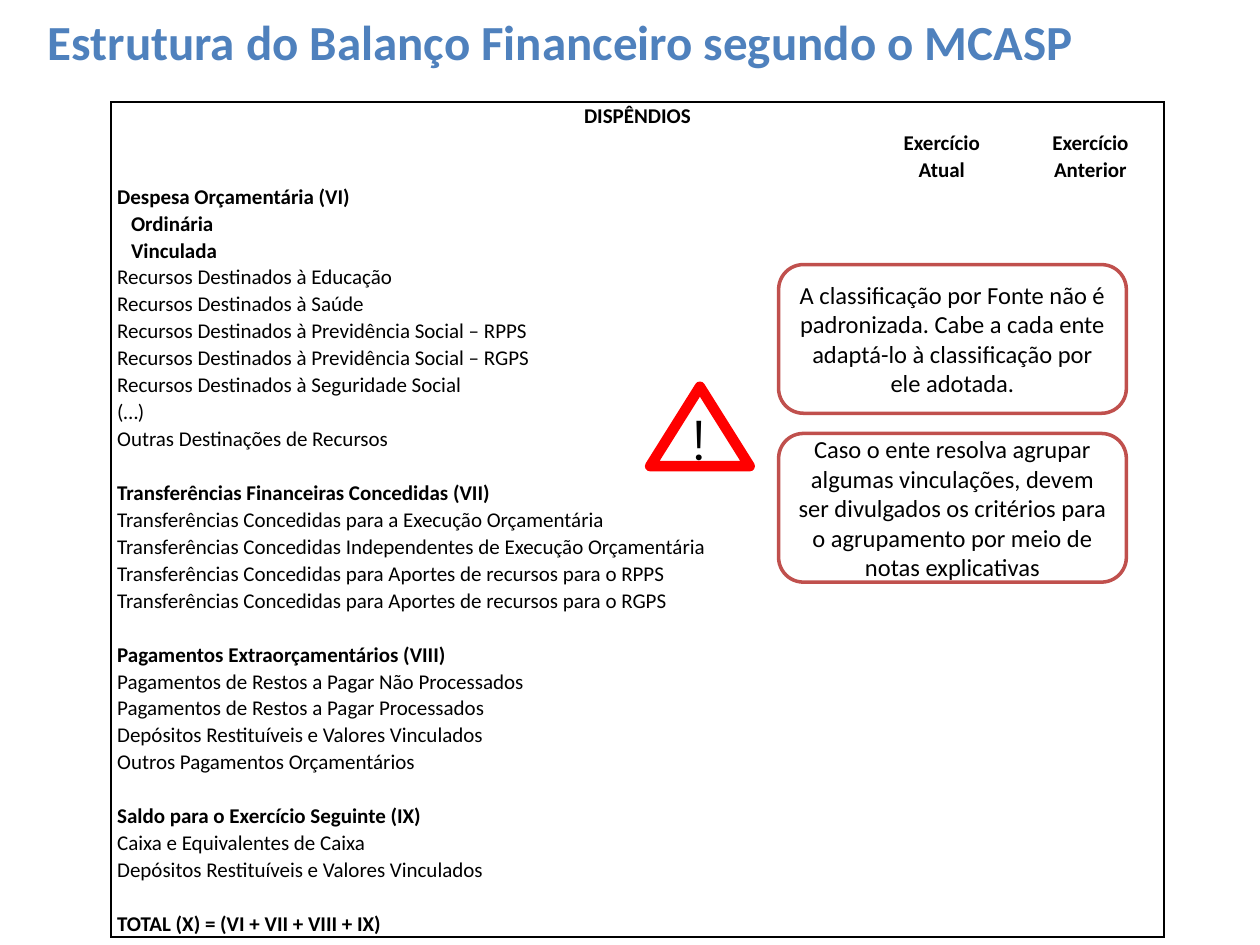
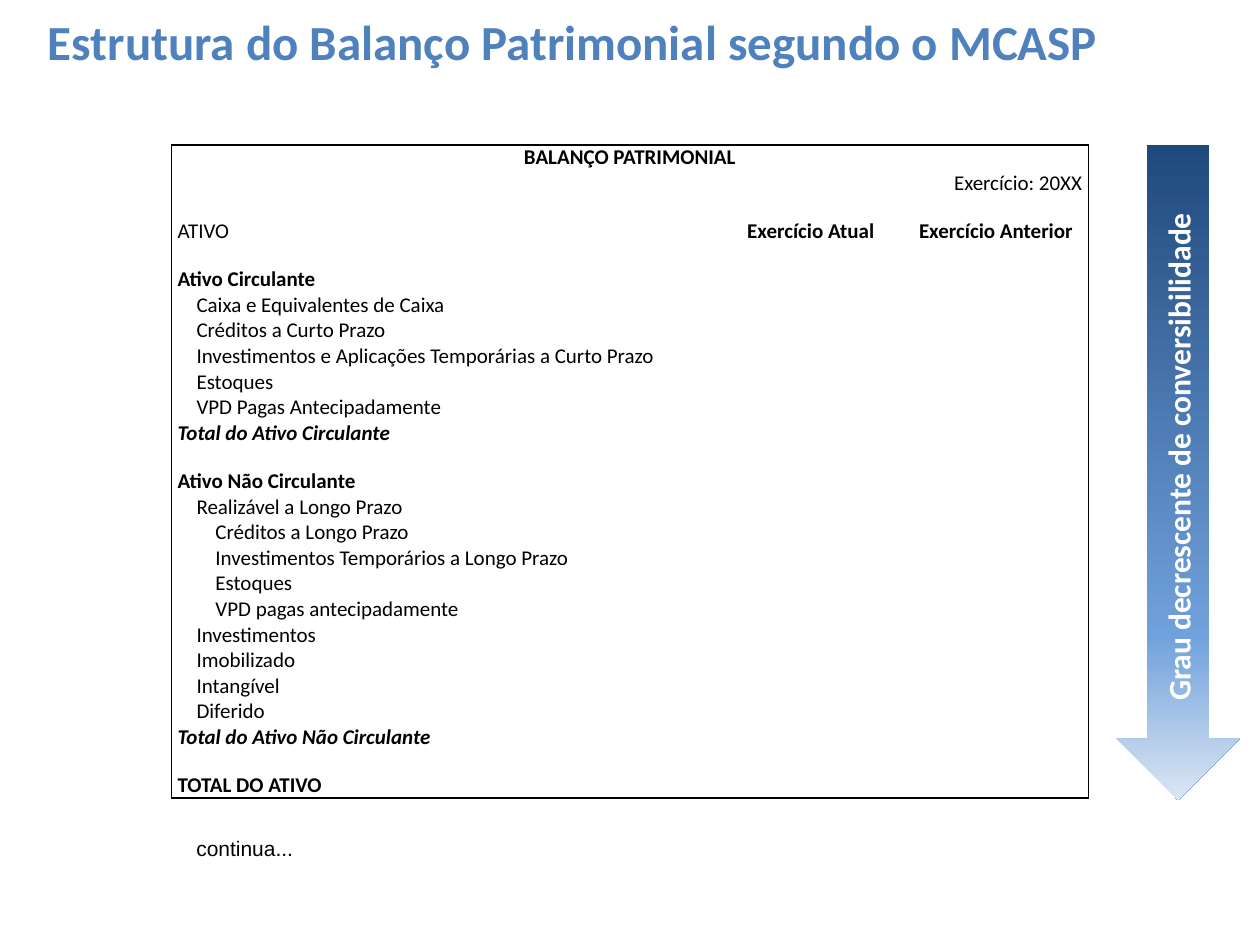
import dataclasses

import pptx
import pptx.dml.color
import pptx.enum.shapes
import pptx.enum.text
import pptx.oxml
import pptx.oxml.ns
import pptx.util

SHAPE = pptx.enum.shapes.MSO_SHAPE
ALIGN = pptx.enum.text.PP_ALIGN
ANCHOR = pptx.enum.text.MSO_ANCHOR
DRAWING = pptx.oxml.ns.nsdecls("a")


@dataclasses.dataclass(frozen=True)
class Theme:
    font: str = "Calibri"
    note_font: str = "Arial"
    sign_font: str = "Montserrat"
    title: str = "4F81BD"
    ink: str = "000000"
    paper: str = "FFFFFF"
    callout: str = "C0504D"
    warning: str = "FF0000"
    arrow: tuple = ((0, "1F497D"), (75, "71A1DC"), (100, "DCE6F2"))
    title_size: int = 28
    sign_size: int = 32
    arrow_size: int = 18
    callout_size: int = 14
    table_size: int = 12
    blank_size: int = 10


@dataclasses.dataclass(frozen=True)
class Line:
    text: str
    bold: bool = False
    italic: bool = False
    indent: float = 0
    align: object = ALIGN.LEFT


def heading(text, **options):
    return Line(text, bold=True, **options)


def centred(text):
    return heading(text, align=ALIGN.CENTER)


def total(text):
    return heading(text, italic=True)


def section(title, *items, indent=0):
    return [[[heading(title, indent=indent)]]] + [[[Line(item)]] for item in items]


class Deck:
    """Places elements on a grid of 100 columns by 75 rows."""

    def __init__(self, theme):
        self.theme = theme
        self.presentation = pptx.Presentation()
        self.presentation.slide_width = pptx.util.Inches(10)
        self.presentation.slide_height = pptx.util.Inches(7.5)
        self.slide = None

    def across(self, columns):
        return round(self.presentation.slide_width * columns / 100)

    def down(self, rows):
        return round(self.presentation.slide_height * rows / 75)

    def box(self, left, top, width, height):
        return self.across(left), self.down(top), self.across(width), self.down(height)

    def run(self, paragraph, text, size, color=None, font=None, bold=False, italic=False):
        run = paragraph.add_run()
        run.text = text
        run.font.name = font or self.theme.font
        run.font.size = pptx.util.Pt(size)
        run.font.bold = bold
        run.font.italic = italic
        run.font.color.rgb = pptx.dml.color.RGBColor.from_string(color or self.theme.ink)

    def add_slide(self, title):
        self.slide = self.presentation.slides.add_slide(self.presentation.slide_layouts[5])
        shape = self.slide.shapes.title
        shape.left, shape.top, shape.width, shape.height = self.box(2.8, -0.3, 90, 7.1)
        frame = shape.text_frame
        frame.auto_size = pptx.enum.text.MSO_AUTO_SIZE.NONE
        frame.vertical_anchor = ANCHOR.MIDDLE
        frame.paragraphs[0].alignment = ALIGN.LEFT
        self.run(frame.paragraphs[0], title, self.theme.title_size, self.theme.title, bold=True)

    def shape(self, kind, area, line=None, weight=0):
        shape = self.slide.shapes.add_shape(kind, *self.box(*area))
        shape.shadow.inherit = False
        shape.fill.solid()
        shape.fill.fore_color.rgb = pptx.dml.color.RGBColor.from_string(self.theme.paper)
        if line:
            shape.line.color.rgb = pptx.dml.color.RGBColor.from_string(line)
            shape.line.width = pptx.util.Pt(weight)
        else:
            shape.line.fill.background()
        return shape

    def label(self, shape, text, size, **style):
        frame = shape.text_frame
        frame.word_wrap = True
        frame.vertical_anchor = ANCHOR.MIDDLE
        frame.paragraphs[0].alignment = ALIGN.CENTER
        self.run(frame.paragraphs[0], text, size, **style)

    def callout(self, area, text):
        shape = self.shape(SHAPE.ROUNDED_RECTANGLE, area, self.theme.callout, 2)
        self.label(shape, text, self.theme.callout_size)

    def text(self, area, text, size, font, align=ALIGN.LEFT, wrap=True):
        frame = self.slide.shapes.add_textbox(*self.box(*area)).text_frame
        frame.word_wrap = wrap
        frame.paragraphs[0].alignment = align
        self.run(frame.paragraphs[0], text, size, font=font)

    def warning_sign(self, area, mark_area):
        triangle = self.shape(SHAPE.ISOSCELES_TRIANGLE, area, self.theme.warning, 6)
        outline = triangle._element.spPr.find(pptx.oxml.ns.qn("a:ln"))
        outline.append(pptx.oxml.parse_xml(f"<a:round {DRAWING}/>"))
        self.text(mark_area, "!", self.theme.sign_size, self.theme.sign_font, ALIGN.CENTER)

    def gradient_arrow(self, area, text):
        shape = self.shape(SHAPE.DOWN_ARROW, area)
        stops = "".join(
            f'<a:gs pos="{share * 1000}"><a:srgbClr val="{color}"/></a:gs>'
            for share, color in self.theme.arrow)
        gradient = pptx.oxml.parse_xml(
            f'<a:gradFill {DRAWING}><a:gsLst>{stops}</a:gsLst>'
            '<a:lin ang="5400000" scaled="0"/></a:gradFill>')
        properties = shape._element.spPr
        properties.replace(properties.find(pptx.oxml.ns.qn("a:solidFill")), gradient)
        shape._element.txBody.bodyPr.set("vert", "vert270")
        self.label(shape, text, self.theme.arrow_size, color=self.theme.paper, bold=True)

    def table(self, left, top, widths, rows, merges, line_height, blank_height, spacing, anchor):
        """Each row lists its cells; each cell lists its lines."""
        heights = [line_height * max(map(len, row)) if row else blank_height for row in rows]
        area = self.box(left, top, sum(widths), sum(heights))
        table = self.slide.shapes.add_table(len(rows), len(widths), *area).table
        table.first_row = table.horz_banding = False
        for column, width in zip(table.columns, widths):
            column.width = self.across(width)
        for row, height in zip(table.rows, heights):
            row.height = self.down(height)
        for row, first, last in merges:
            table.cell(row, first).merge(table.cell(row, last))
        for i, row in enumerate(rows):
            for j in range(len(widths)):
                cell = table.cell(i, j)
                self.fill_cell(cell, row[j] if j < len(row) else [], spacing, anchor)
                end = j + (cell.span_width if cell.is_merge_origin else 1)
                self.border(cell, lnL=j == 0, lnR=end == len(widths),
                            lnT=i == 0, lnB=i == len(rows) - 1)

    def fill_cell(self, cell, lines, spacing, anchor):
        cell.margin_left = cell.margin_right = self.across(0.5)
        cell.margin_top = cell.margin_bottom = 0
        cell.vertical_anchor = anchor
        cell.fill.background()
        frame = cell.text_frame
        if not lines:
            ending = frame.paragraphs[0]._p.get_or_add_endParaRPr()
            ending.set("sz", str(self.theme.blank_size * 100))
        for number, line in enumerate(lines):
            paragraph = frame.add_paragraph() if number else frame.paragraphs[0]
            paragraph.alignment = line.align
            paragraph.line_spacing = spacing
            paragraph._p.get_or_add_pPr().set("marL", str(self.across(line.indent)))
            self.run(paragraph, line.text, self.theme.table_size,
                     bold=line.bold, italic=line.italic)

    def border(self, cell, **edges):
        ink = f'<a:solidFill><a:srgbClr val="{self.theme.ink}"/></a:solidFill>'
        properties = cell._tc.get_or_add_tcPr()
        for position, (side, outer) in enumerate(edges.items()):
            fill = ink if outer else "<a:noFill/>"
            properties.insert(position, pptx.oxml.parse_xml(
                f'<a:{side} {DRAWING} w="12700">{fill}</a:{side}>'))


def financial_balance(deck):
    deck.add_slide("Estrutura do Balanço Financeiro segundo o MCASP")

    # Expenditure table
    step = 1.1
    rows = [
        [[centred("DISPÊNDIOS")]],
        [[], [], [centred("Exercício"), centred("Atual")], [centred("Exercício Anterior")]],
        *section("Despesa Orçamentária (VI)"),
        *section("Ordinária", indent=step),
        *section(
            "Vinculada",
            "Recursos Destinados à Educação",
            "Recursos Destinados à Saúde",
            "Recursos Destinados à Previdência Social – RPPS",
            "Recursos Destinados à Previdência Social – RGPS",
            indent=step),
        [[Line("Recursos Destinados à Seguridade Social"), Line("(…)")]],
        [[Line("Outras Destinações de Recursos")]],
        [],
        *section(
            "Transferências Financeiras Concedidas (VII)",
            "Transferências Concedidas para a Execução Orçamentária",
            "Transferências Concedidas Independentes de Execução Orçamentária",
            "Transferências Concedidas para Aportes de recursos para o RPPS",
            "Transferências Concedidas para Aportes de recursos para o RGPS"),
        [],
        *section(
            "Pagamentos Extraorçamentários (VIII)",
            "Pagamentos de Restos a Pagar Não Processados",
            "Pagamentos de Restos a Pagar Processados",
            "Depósitos Restituíveis e Valores Vinculados",
            "Outros Pagamentos Orçamentários"),
        [],
        *section(
            "Saldo para o Exercício Seguinte (IX)",
            "Caixa e Equivalentes de Caixa",
            "Depósitos Restituíveis e Valores Vinculados"),
        [],
        *section("TOTAL (X) = (VI + VII + VIII + IX)"),
    ]
    deck.table(8.8, 8.1, (48.1, 11.9, 11.9, 11.7), rows, [(0, 0, 3)],
               line_height=2.14, blank_height=2.14, spacing=1.05, anchor=ANCHOR.MIDDLE)

    # Callouts, one below the other
    notes = (
        "A classificação por Fonte não é padronizada. Cabe a cada ente adaptá-lo "
        "à classificação por ele adotada.",
        "Caso o ente resolva agrupar algumas vinculações, devem ser divulgados os "
        "critérios para o agrupamento por meio de notas explicativas",
    )
    for number, note in enumerate(notes):
        deck.callout((61.8, 21 + 13.4 * number, 27.6, 11.8), note)

    # Warning sign
    deck.warning_sign((51.6, 30.7, 7.9, 6.3), (53.9, 31.6, 3.1, 6.4))


def asset_balance(deck):
    deck.add_slide("Estrutura do Balanço Patrimonial segundo o MCASP")

    # Continuation note
    deck.text((14.6, 65.8, 9.8, 3), "continua...", deck.theme.table_size,
              deck.theme.note_font, wrap=False)

    # Asset table
    current = ("Caixa e Equivalentes de Caixa", "Créditos a Curto Prazo",
               "Investimentos e Aplicações Temporárias a Curto Prazo",
               "Estoques", "VPD Pagas Antecipadamente")
    long_term = ("Créditos a Longo Prazo", "Investimentos Temporários a Longo Prazo",
                 "Estoques", "VPD pagas antecipadamente")
    fixed = ("Investimentos", "Imobilizado", "Intangível", "Diferido")
    step = 1.5
    rows = [
        [[centred("BALANÇO PATRIMONIAL")]],
        [[], [Line("Exercício: 20XX", align=ALIGN.RIGHT)]],
        [],
        [[Line("ATIVO")], [centred("Exercício Atual")], [centred("Exercício Anterior")]],
        [],
        *section("Ativo Circulante"),
        [[Line(item, indent=step) for item in current]],
        [[total("Total do Ativo Circulante")]],
        [],
        *section("Ativo Não Circulante"),
        [[Line("Realizável a Longo Prazo", indent=step),
          *(Line(item, indent=2 * step) for item in long_term),
          *(Line(item, indent=step) for item in fixed)]],
        [[total("Total do Ativo Não Circulante")]],
        [],
        *section("TOTAL DO ATIVO"),
    ]
    deck.table(13.6, 11.5, (43.4, 14.7, 14.7), rows, [(0, 0, 2), (1, 1, 2)],
               line_height=2.03, blank_height=1.8, spacing=1.0, anchor=ANCHOR.TOP)

    # Convertibility arrow
    deck.gradient_arrow((88.6, 11.5, 9.8, 52), "Grau decrescente de conversibilidade")


def main():
    deck = Deck(Theme())
    financial_balance(deck)
    asset_balance(deck)
    deck.presentation.save("out.pptx")


if __name__ == "__main__":
    main()
